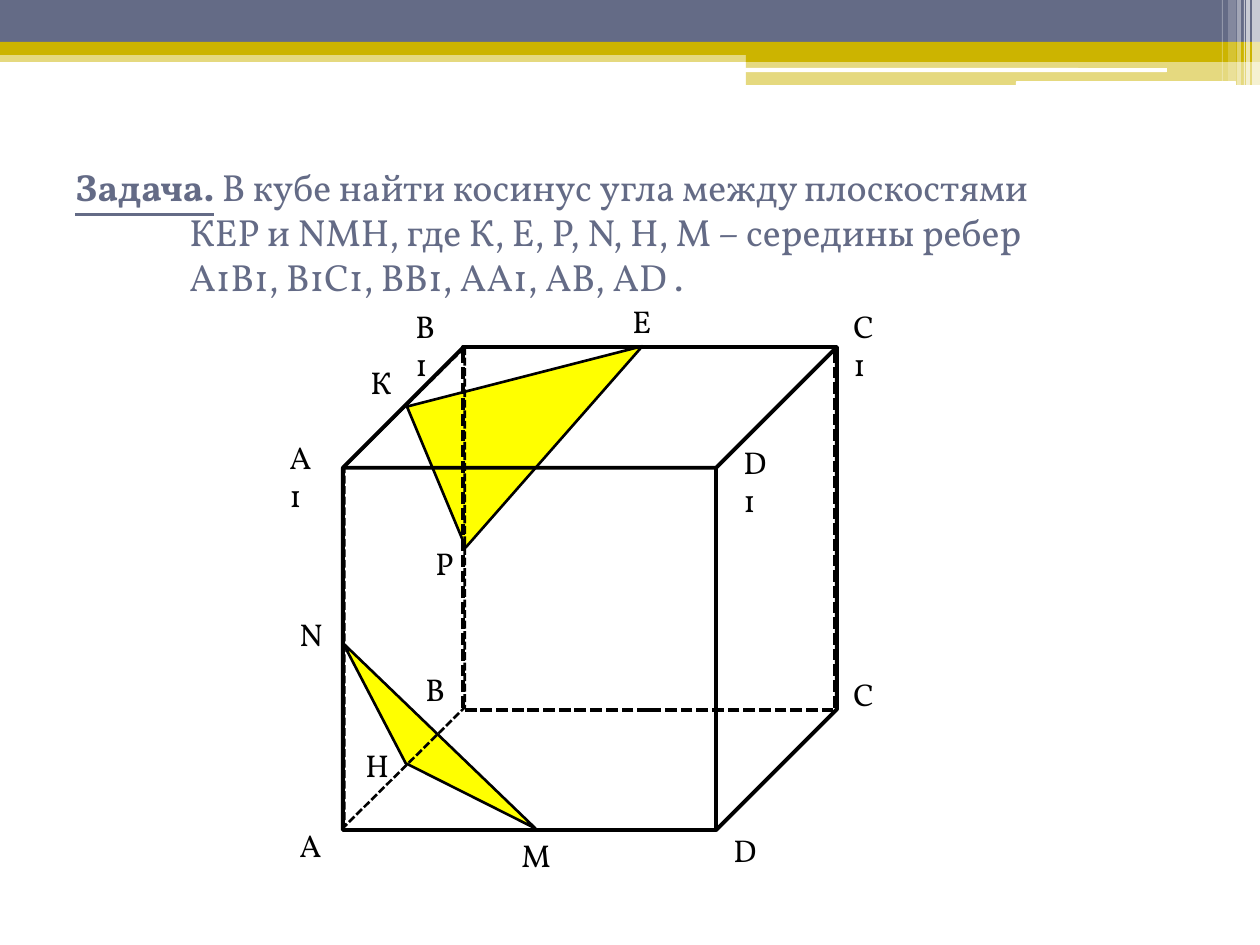
from lxml.etree import SubElement
from pptx import Presentation
from pptx.dml.color import RGBColor
from pptx.enum.dml import MSO_LINE_DASH_STYLE as Dash
from pptx.enum.shapes import MSO_SHAPE as Shape
from pptx.enum.text import MSO_ANCHOR as Anchor
from pptx.oxml.ns import qn
from pptx.util import Pt

EMU_PER_PX = 914400 / 126
COLORS = {"slate": "646B86", "gold": "CCB400", "white": "FFFFFF",
          "yellow": "FFFF00", "black": "000000"}


def px(n):
    return round(n * EMU_PER_PX)


def rgb(name):
    return RGBColor.from_string(COLORS[name])


class Deck:
    font = "Vollkorn"

    def __init__(self, width, height):
        self.prs = Presentation()
        self.prs.slide_width, self.prs.slide_height = px(width), px(height)
        self.s = self.prs.slides.add_slide(self.prs.slide_layouts[6])

    def shape(self, kind, box, fill=None, alpha=100, line=None, dash=None,
              adj=None, rot=0, flip=False):
        sp = self.s.shapes.add_shape(kind, *map(px, box))
        sp.shadow.inherit = False
        sp.rotation = rot
        if adj is not None:
            sp.adjustments[0] = adj
        if flip:
            sp._element.spPr.find(qn("a:xfrm")).set("flipV", "1")
        if fill:
            sp.fill.solid()
            sp.fill.fore_color.rgb = rgb(fill)
            if alpha < 100:
                color = sp._element.spPr.find(".//" + qn("a:srgbClr"))
                SubElement(color, qn("a:alpha")).set("val", str(alpha * 1000))
        else:
            sp.fill.background()
        if line:
            sp.line.color.rgb = rgb("black")
            sp.line.width = Pt(line)
            if dash:
                sp.line.dash_style = dash
        else:
            sp.line.fill.background()
        return sp

    def text(self, box, parts, size, color, anchor=Anchor.TOP):
        tf = self.s.shapes.add_textbox(*map(px, box)).text_frame
        tf.word_wrap = True
        tf.vertical_anchor = anchor
        p = tf.paragraphs[0]
        p.text = "\v".join(parts)
        for r in p.runs:
            self.style(r, size, color)
        return p

    def style(self, r, size, color):
        r.font.name, r.font.size = self.font, Pt(size)
        r.font.color.rgb = rgb(color)

    def title(self, box, lead, lines, hang):
        p = self.text(box, [lead], 21.6, "slate", Anchor.MIDDLE)
        p.runs[0].font.bold = p.runs[0].font.underline = True
        for i, line in enumerate(lines):
            if i:
                p.add_line_break()
            r = p.add_run()
            r.text = line
            self.style(r, 21.6, "slate")
        # Hanging indent for the continuation lines
        pPr = p._p.get_or_add_pPr()
        pPr.set("marL", str(px(hang)))
        pPr.set("indent", str(-px(hang)))

    def label(self, text, x, y, width):
        self.text((x, y, width, 50), [text], 18, "black")

    def group(self, shapes):
        self.s.shapes.add_group_shape(shapes)


def main():
    deck = Deck(1260, 945)

    # Header bands
    for box, fill, alpha in [
        ((0, 50, 1260, 12), "gold", 50),
        ((0, 0, 1260, 43), "slate", 100),
        ((0, 42, 1260, 13), "gold", 100),
        ((746, 49, 514, 13), "gold", 100),
        ((746, 61, 514, 24), "gold", 50),
    ]:
        deck.shape(Shape.RECTANGLE, box, fill, alpha)
    for box in [(745, 68, 422, 4), (1016, 81, 220, 5)]:
        deck.shape(Shape.ROUNDED_RECTANGLE, box, "white", adj=0.17)

    # Pale stripes at the right edge: x, width, height, opacity
    for x, w, h, alpha in [(1252, 8, 86, 65), (1246, 4, 86, 65),
                           (1244, 1, 86, 60), (1237, 4, 86, 40),
                           (1228, 8, 81, 20), (1222, 1, 81, 30)]:
        deck.shape(Shape.RECTANGLE, (x, 0, w, h), "white", alpha)

    # Section planes NMH and KEP
    deck.shape(Shape.ISOSCELES_TRIANGLE, (291, 730, 267, 43), "yellow",
               line=1.5, adj=0.48, rot=43.9, flip=True)
    deck.shape(Shape.ISOSCELES_TRIANGLE, (422, 374, 243, 151), "yellow",
               line=1.5, adj=0.91, rot=165.6)

    # Problem statement
    deck.title((63, 158, 1134, 147), "Задача.", [
        " В кубе найти косинус угла между плоскостями",
        "КЕР и NМН, где К, Е, Р, N, Н, М – середины ребер",
        "А1В1, В1С1, ВВ1, АА1, АВ, АD .",
    ], hang=114)

    # Cube with its hidden edges
    deck.group([
        deck.shape(Shape.CUBE, (343, 347, 494, 483), line=2.25),
        deck.shape(Shape.RECTANGLE, (463, 347, 372, 363), line=2.25,
                   dash=Dash.SQUARE_DOT),
        deck.shape(Shape.PARALLELOGRAM, (193, 459, 423, 256), line=1.5,
                   dash=Dash.SQUARE_DOT, adj=0.99, rot=135.3),
    ])

    # Vertex and midpoint labels: text, x, y, width
    for label in [
        ("А", 287, 820, 47), ("А1", 277, 432, 57), ("В1", 403, 301, 54),
        ("С1", 841, 301, 57), ("С", 841, 669, 47), ("D", 721, 825, 49),
        ("D1", 731, 437, 59), ("В", 413, 664, 44), ("К", 358, 357, 47),
        ("Е", 620, 296, 44), ("Р", 423, 538, 44), ("N", 287, 609, 49),
        ("М", 509, 830, 54), ("H", 353, 740, 50),
    ]:
        deck.label(*label)

    deck.prs.save("out.pptx")


if __name__ == "__main__":
    main()
